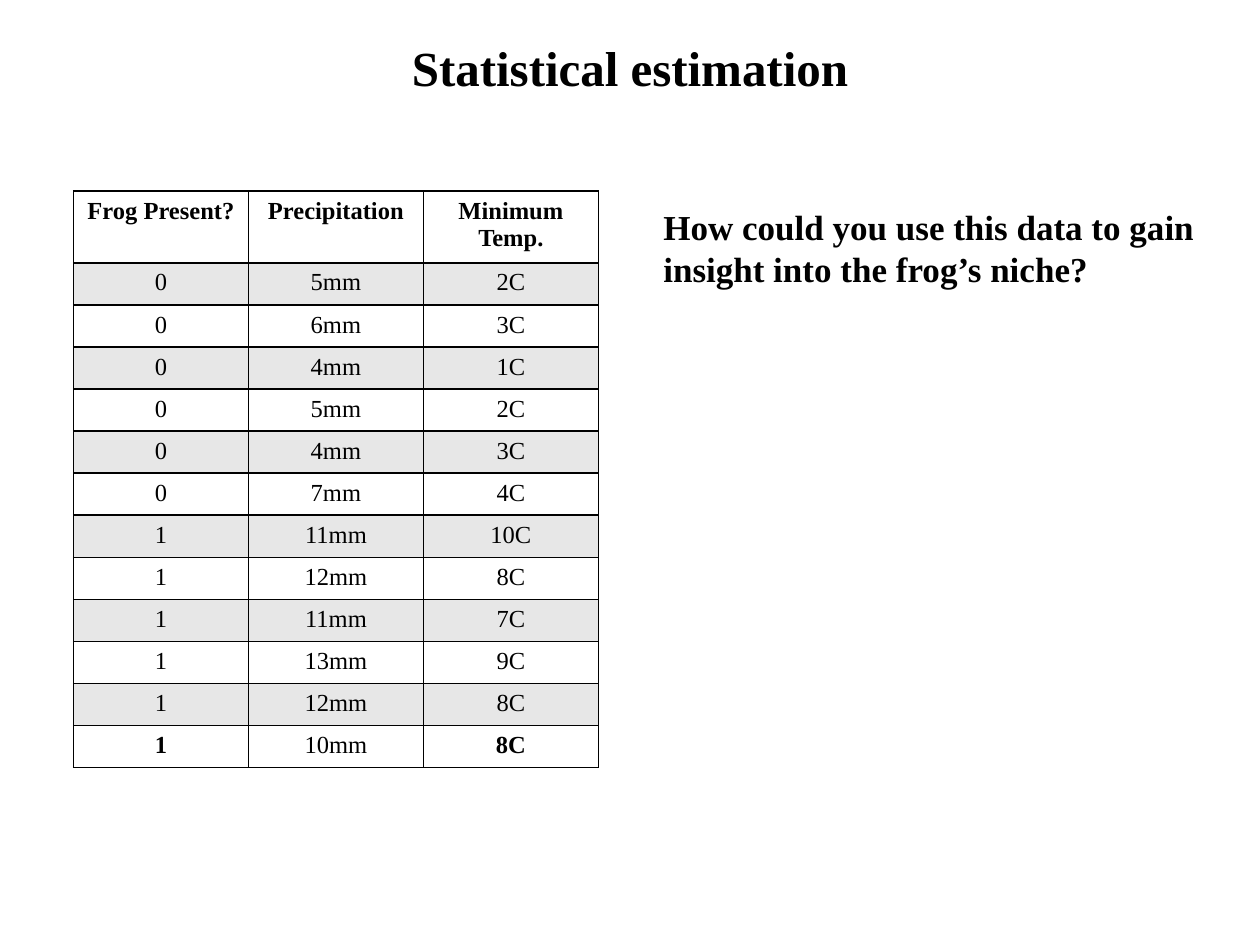
from lxml import etree
from pptx import Presentation
from pptx import util as u
from pptx.dml import color
from pptx.enum import text
from pptx.oxml import ns


def rgb(code):
    return color.RGBColor.from_string(code)


class Deck:
    font = "Times New Roman"
    ink, white, band = "000000", "FFFFFF", "E7E7E7"

    def __init__(self, wide, high):
        self.prs = Presentation()
        self.prs.slide_width, self.prs.slide_height = u.Pt(wide), u.Pt(high)
        self.slide = self.prs.slides.add_slide(self.prs.slide_layouts[5])

    def label(self, frame, words, size, bold=False, align=text.PP_ALIGN.LEFT):
        para = frame.paragraphs[0]
        para.alignment = align
        run = para.add_run()
        run.text = words
        run.font.name = self.font
        run.font.size = u.Pt(size)
        run.font.bold = bold
        run.font.color.rgb = rgb(self.ink)

    def fit(self, frame):
        frame.word_wrap = True
        frame.auto_size = text.MSO_AUTO_SIZE.SHAPE_TO_FIT_TEXT
        frame.vertical_anchor = text.MSO_ANCHOR.TOP

    def title(self, words, left, top, wide, high):
        shape = self.slide.shapes.title
        shape.left, shape.top = u.Pt(left), u.Pt(top)
        shape.width, shape.height = u.Pt(wide), u.Pt(high)
        self.fit(shape.text_frame)
        self.label(shape.text_frame, words, 28, True, text.PP_ALIGN.CENTER)

    def note(self, words, left, top, wide, high):
        box = self.slide.shapes.add_textbox(
            u.Pt(left), u.Pt(top), u.Pt(wide), u.Pt(high))
        self.fit(box.text_frame)
        self.label(box.text_frame, words, 20, True)

    def edge(self, cell):
        # Borders must come before the fill in the cell properties
        props = cell._tc.get_or_add_tcPr()
        for spot, side in enumerate(("lnL", "lnR", "lnT", "lnB")):
            line = etree.Element(ns.qn("a:" + side), w=str(u.Pt(1)))
            fill = etree.SubElement(line, ns.qn("a:solidFill"))
            etree.SubElement(fill, ns.qn("a:srgbClr"), val=self.ink)
            props.insert(spot, line)

    def table(self, rows, strong, left, top, wide, head, high):
        """Draw rows; strong holds the (row, column) pairs set in bold."""
        count = len(rows[0])
        grid = self.slide.shapes.add_table(
            len(rows), count, u.Pt(left), u.Pt(top), u.Pt(wide * count),
            u.Pt(head + high * (len(rows) - 1))).table
        for col in grid.columns:
            col.width = u.Pt(wide)
        for r, row in enumerate(rows):
            grid.rows[r].height = u.Pt(high if r else head)
            for c, words in enumerate(row):
                cell = grid.cell(r, c)
                cell.fill.solid()
                cell.fill.fore_color.rgb = rgb(self.band if r % 2 else self.white)
                self.edge(cell)
                self.label(cell.text_frame, words, 14,
                           r == 0 or (r, c) in strong, text.PP_ALIGN.CENTER)


def main():
    deck = Deck(720, 540)

    # Heading
    deck.title("Statistical estimation", 0, 18, 720, 41)

    # Frog records: presence, rainfall in mm, lowest temperature in C
    data = [(0, 5, 2), (0, 6, 3), (0, 4, 1), (0, 5, 2), (0, 4, 3), (0, 7, 4),
            (1, 11, 10), (1, 12, 8), (1, 11, 7), (1, 13, 9), (1, 12, 8),
            (1, 10, 8)]
    rows = [("Frog Present?", "Precipitation", "Minimum Temp.")]
    rows += [(str(frog), f"{rain}mm", f"{temp}C") for frog, rain, temp in data]
    last = len(data)
    deck.table(rows, {(last, 0), (last, 2)}, 42, 109.2, 100, 41, 24)

    # Question
    deck.note("How could you use this data to gain insight into the frog’s niche?",
              372, 114, 330, 55.5)

    deck.prs.save("out.pptx")


if __name__ == "__main__":
    main()
